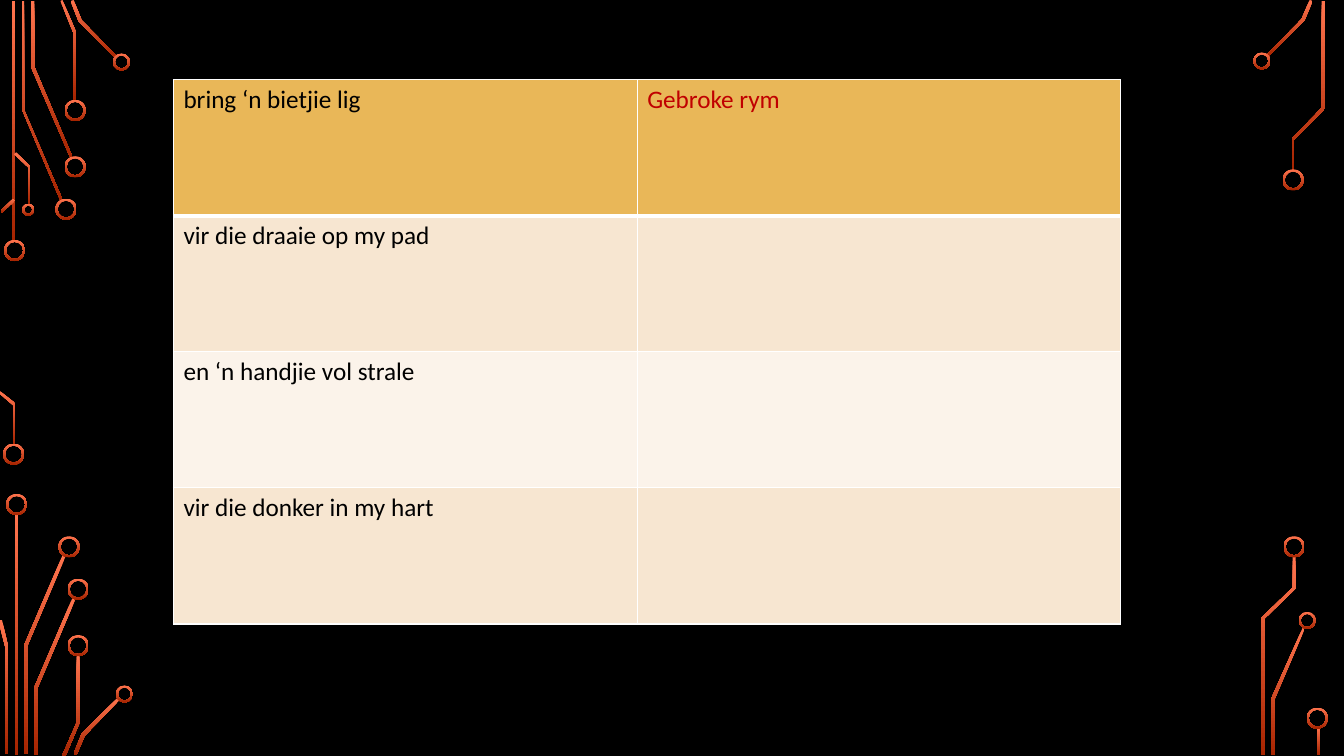
from lxml import etree
from pptx import Presentation
from pptx.dml.color import RGBColor
from pptx.enum.shapes import MSO_SHAPE
from pptx.oxml.ns import qn
from pptx.util import Inches, Pt

RECTANGLE = MSO_SHAPE.RECTANGLE
DONUT = MSO_SHAPE.DONUT

BLACK = RGBColor(0x00, 0x00, 0x00)
WHITE = RGBColor(0xFF, 0xFF, 0xFF)
RED = RGBColor(0xC0, 0x00, 0x00)
CORAL = RGBColor(0xFF, 0x74, 0x4E)
RUST = RGBColor(0xA6, 0x24, 0x00)
GOLD = RGBColor(0xE9, 0xB7, 0x58)
SAND = RGBColor(0xF7, 0xE6, 0xD1)
CREAM = RGBColor(0xFB, 0xF3, 0xEA)


def paint_copper(shape):
    """Fill a circuit part with the gradient that darkens downwards."""
    shape.shadow.inherit = False
    shape.line.fill.background()
    shape.fill.gradient()
    shape.fill.gradient_angle = 270
    for stop, color in zip(shape.fill.gradient_stops, (CORAL, RUST)):
        stop.color.rgb = color


def write_text(cell, text, color=BLACK, size=18, font="Calibri"):
    span = cell.text_frame.paragraphs[0].add_run()
    span.text = text
    span.font.name = font
    span.font.size = Pt(size)
    span.font.bold = False
    span.font.color.rgb = color


deck = Presentation()
deck.slide_width = Inches(13.33)
deck.slide_height = Inches(7.5)
page = deck.slides.add_slide(deck.slide_layouts[6])
page.background.fill.solid()
page.background.fill.fore_color.rgb = BLACK

# Straight circuit tracks: left, top, height
for left, top, height in [(0.12, 0.01, 2.39), (0.15, 5.1, 2.39), (13.06, 7.21, 0.28)]:
    paint_copper(page.shapes.add_shape(
        RECTANGLE, Inches(left), Inches(top), Inches(0.03), Inches(height)))

# Bent circuit tracks: outline points in hundredths of an inch
bent_tracks = [
    # top left
    [(60, 199), (22, 109), (22, 1), (24, 1), (24, 109), (62, 198)],
    [(70, 157), (31, 67), (31, 1), (34, 1), (34, 66), (72, 156)],
    [(76, 100), (73, 100), (73, 33), (60, 1), (62, 0), (76, 33)],
    [(115, 58), (78, 21), (70, 1), (73, 0), (81, 20), (116, 56)],
    [(2, 211), (1, 209), (13, 197), (15, 199)],
    [(15, 441), (13, 441), (13, 402), (0, 391), (0, 388), (15, 400)],
    [(30, 203), (28, 203), (28, 166), (14, 153), (16, 151), (30, 165)],
    # bottom left
    [(27, 748), (24, 748), (24, 640), (62, 551), (65, 552), (27, 641)],
    [(8, 748), (5, 748), (5, 641), (0, 622), (0, 615), (2, 615), (8, 641)],
    [(37, 749), (34, 749), (34, 682), (72, 593), (75, 594), (37, 683)],
    [(65, 750), (62, 749), (76, 717), (76, 650), (79, 650), (79, 717)],
    [(76, 749), (73, 748), (81, 728), (117, 692), (119, 694), (84, 730)],
    # top right
    [(1258, 56), (1256, 55), (1291, 19), (1299, 0), (1302, 1), (1294, 20)],
    [(1283, 169), (1281, 169), (1281, 138), (1311, 107), (1311, 1),
     (1314, 1), (1314, 108), (1283, 139)],
    # bottom right
    [(1264, 749), (1261, 749), (1261, 693), (1292, 623), (1294, 624), (1264, 694)],
    [(1254, 749), (1251, 749), (1251, 613), (1282, 583), (1282, 552),
     (1285, 552), (1285, 584), (1254, 614)],
]
for points in bent_tracks:
    builder = page.shapes.build_freeform(*points[0], scale=Inches(0.01))
    builder.add_line_segments(points[1:], close=True)
    paint_copper(builder.convert_to_shape())

# Ring terminals: left and top, grouped by diameter
ring_places = {
    0.21: [(0.04, 2.38), (0.03, 4.4), (0.55, 1.97), (0.64, 1.55), (0.64, 0.99),
           (0.06, 4.9), (0.58, 5.32), (0.67, 5.74), (0.67, 6.3),
           (12.72, 1.68), (12.73, 5.32), (12.96, 7.02)],
    0.17: [(1.12, 0.53), (1.15, 6.8), (12.43, 0.52), (12.88, 6.07)],
    0.12: [(0.22, 2.02)],
}
for diameter, places in ring_places.items():
    for left, top in places:
        ring = page.shapes.add_shape(
            DONUT, Inches(left), Inches(top), Inches(diameter), Inches(diameter))
        ring.adjustments[0] = 0.02 / diameter
        paint_copper(ring)

# Rhyme table
rows = [
    ("bring ‘n bietjie lig", "Gebroke rym", GOLD),
    ("vir die draaie op my pad", "", SAND),
    ("en ‘n handjie vol strale", "", CREAM),
    ("vir die donker in my hart", "", SAND),
]
table = page.shapes.add_table(
    len(rows), 2, Inches(1.72), Inches(0.79), Inches(9.39), Inches(5.4)).table
table.columns[0].width = Inches(4.6)
table.columns[1].width = Inches(4.79)

for row_index, (verse, rhyme, row_fill) in enumerate(rows):
    border_points = {"lnL": 1, "lnR": 1,
                     "lnT": 3 if row_index == 1 else 1,
                     "lnB": 3 if row_index == 0 else 1}
    for column_index, (text, color) in enumerate([(verse, BLACK), (rhyme, RED)]):
        cell = table.cell(row_index, column_index)
        cell.fill.solid()
        cell.fill.fore_color.rgb = row_fill
        if text:
            write_text(cell, text, color=color)
        # Borders stand before the fill in the cell properties
        properties = cell._tc.get_or_add_tcPr()
        for position, (side, points) in enumerate(border_points.items()):
            border = etree.Element(qn(f"a:{side}"), w=str(Pt(points)))
            solid = etree.SubElement(border, qn("a:solidFill"))
            etree.SubElement(solid, qn("a:srgbClr"), val=str(WHITE))
            properties.insert(position, border)

deck.save("out.pptx")
